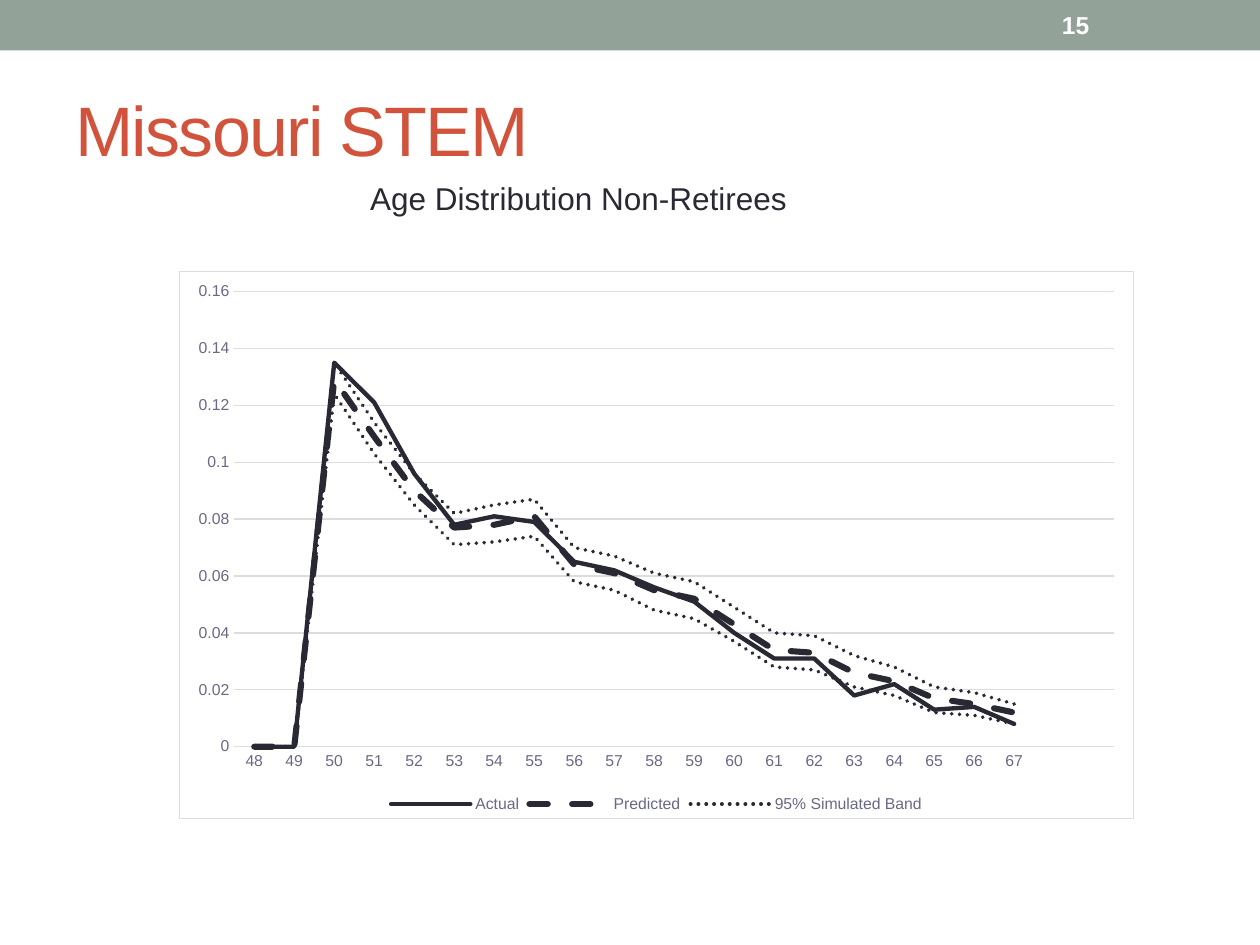
from dataclasses import dataclass

from lxml import etree
from pptx import Presentation
from pptx.chart.data import CategoryChartData
from pptx.dml.color import RGBColor
from pptx.enum.chart import XL_CHART_TYPE, XL_LEGEND_POSITION, XL_TICK_MARK
from pptx.enum.dml import MSO_LINE
from pptx.enum.shapes import MSO_SHAPE
from pptx.enum.text import MSO_ANCHOR
from pptx.oxml import parse_xml
from pptx.oxml.ns import nsdecls, qn
from pptx.util import Inches, Pt

LINE_CHART = XL_CHART_TYPE.LINE
BOTTOM = XL_LEGEND_POSITION.BOTTOM
NO_TICK = XL_TICK_MARK.NONE
SOLID, DASH, DOT = MSO_LINE.SOLID, MSO_LINE.DASH, MSO_LINE.ROUND_DOT
RECTANGLE = MSO_SHAPE.RECTANGLE
TOP, MIDDLE = MSO_ANCHOR.TOP, MSO_ANCHOR.MIDDLE


@dataclass
class Theme:
    font: str = "Arial"
    white: RGBColor = RGBColor.from_string("FFFFFF")
    sage: RGBColor = RGBColor.from_string("93A299")
    red: RGBColor = RGBColor.from_string("D2533C")
    ink: RGBColor = RGBColor.from_string("292934")
    label: RGBColor = RGBColor.from_string("696986")
    rule: RGBColor = RGBColor.from_string("DCDCE3")
    title_size: int = 40
    subtitle_size: int = 18
    number_size: int = 14
    chart_size: int = 10
    label_size: int = 9
    rule_width: float = 0.75


theme = Theme()
prs = Presentation()
prs.slide_width, prs.slide_height = Inches(10), Inches(7.5)
slide = prs.slides.add_slide(prs.slide_layouts[6])


def add_text(text, left, top, width, height, *, size, color, bold=False,
             anchor=TOP, wrap=True, spacing=None, inset_top=0.05):
    frame = slide.shapes.add_textbox(
        Inches(left), Inches(top), Inches(width), Inches(height)).text_frame
    frame.word_wrap = wrap
    frame.vertical_anchor = anchor
    frame.margin_top = Inches(inset_top)
    run = frame.paragraphs[0].add_run()
    run.text = text
    style_font(run.font, size, color)
    run.font.bold = bold
    if spacing is not None:
        run.font._element.set("spc", str(spacing * 100))


def style_font(font, size, color):
    font.name, font.size = theme.font, Pt(size)
    font.color.rgb = color


# Header band and page number
band = slide.shapes.add_shape(RECTANGLE, 0, 0, Inches(10), Inches(0.4))
band.shadow.inherit = False
band.fill.solid()
band.fill.fore_color.rgb = theme.sage
band.line.fill.background()
add_text("15", 8.33, 0.02, 1.17, 0.36, size=theme.number_size,
         color=theme.white, bold=True, anchor=MIDDLE)

# Headings
add_text("Missouri STEM", 0.5, 0.58, 9, 1.08, size=theme.title_size,
         color=theme.red, spacing=-1, inset_top=0.11)
add_text("Age Distribution Non-Retirees", 2.84, 1.37, 3.54, 0.4,
         size=theme.subtitle_size, color=theme.ink, wrap=False)

# Age shares: name, line width, dash, values for ages 48 to 67
curves = [
    ("Actual", 2.5, SOLID,
     [0, 0, 0.135, 0.121, 0.096, 0.078, 0.081, 0.079, 0.065, 0.062,
      0.056, 0.051, 0.04, 0.031, 0.031, 0.018, 0.022, 0.013, 0.014, 0.008]),
    ("Predicted", 3.5, DASH,
     [0, 0, 0.129, 0.109, 0.09, 0.077, 0.078, 0.081, 0.064, 0.061,
      0.055, 0.052, 0.043, 0.034, 0.033, 0.026, 0.023, 0.017, 0.015, 0.012]),
    ("95% Simulated Band", 2.25, DOT,
     [0, 0, 0.124, 0.103, 0.085, 0.071, 0.072, 0.074, 0.058, 0.055,
      0.048, 0.045, 0.037, 0.028, 0.027, 0.021, 0.018, 0.012, 0.011, 0.008]),
    ("Series 4", 2.25, DOT,
     [0, 0, 0.135, 0.114, 0.096, 0.082, 0.085, 0.087, 0.07, 0.067,
      0.061, 0.058, 0.049, 0.04, 0.039, 0.032, 0.028, 0.021, 0.019, 0.015]),
]
ages = CategoryChartData()
ages.categories = [str(age) for age in range(48, 68)] + ["", ""]
for name, _, _, shares in curves:
    ages.add_series(name, shares + [None, None])
chart = slide.shapes.add_chart(LINE_CHART, Inches(1.42), Inches(2.15),
                               Inches(7.58), Inches(4.35), ages).chart
chart.has_title = False
style_font(chart.font, theme.chart_size, theme.ink)

# Curves
for series, (_, width, dash, _) in zip(chart.plots[0].series, curves):
    series.smooth = False
    line = series.format.line
    line.color.rgb = theme.ink
    line.width = Pt(width)
    line.dash_style = dash
    series.format.line._get_or_add_ln().set("cap", "rnd")
chart.plots[0].vary_by_categories = False

# Axes
age_axis, share_axis = chart.category_axis, chart.value_axis
for axis in (age_axis, share_axis):
    axis.major_tick_mark = axis.minor_tick_mark = NO_TICK
    style_font(axis.tick_labels.font, theme.label_size, theme.label)
share_axis.minimum_scale, share_axis.maximum_scale = 0, 0.16
share_axis.major_unit = 0.02
share_axis.tick_labels.number_format = "General"
share_axis.tick_labels.number_format_is_linked = False
share_axis.format.line.fill.background()
share_axis.has_major_gridlines = True
for rule in (age_axis.format.line, share_axis.major_gridlines.format.line):
    rule.color.rgb = theme.rule
    rule.width = Pt(theme.rule_width)

# Legend, with one entry for both edges of the band
chart.has_legend = True
chart.legend.position = BOTTOM
chart.legend.include_in_layout = False
style_font(chart.legend.font, theme.label_size, theme.label)
hidden_entry = parse_xml(
    f'<c:legendEntry {nsdecls("c")}><c:idx val="3"/><c:delete val="1"/></c:legendEntry>')
chart.legend._element.find(qn("c:legendPos")).addnext(hidden_entry)

# Chart frame with square corners
space = chart._chartSpace
corners = etree.Element(qn("c:roundedCorners"), val="0")
space.find(qn("c:date1904")).addnext(corners)
frame_format = parse_xml(
    f'<c:spPr {nsdecls("c", "a")}>'
    f'<a:solidFill><a:srgbClr val="{theme.white}"/></a:solidFill>'
    f'<a:ln w="{Pt(theme.rule_width)}"><a:solidFill>'
    f'<a:srgbClr val="{theme.rule}"/></a:solidFill></a:ln></c:spPr>')
space.find(qn("c:chart")).addnext(frame_format)

prs.save("out.pptx")
